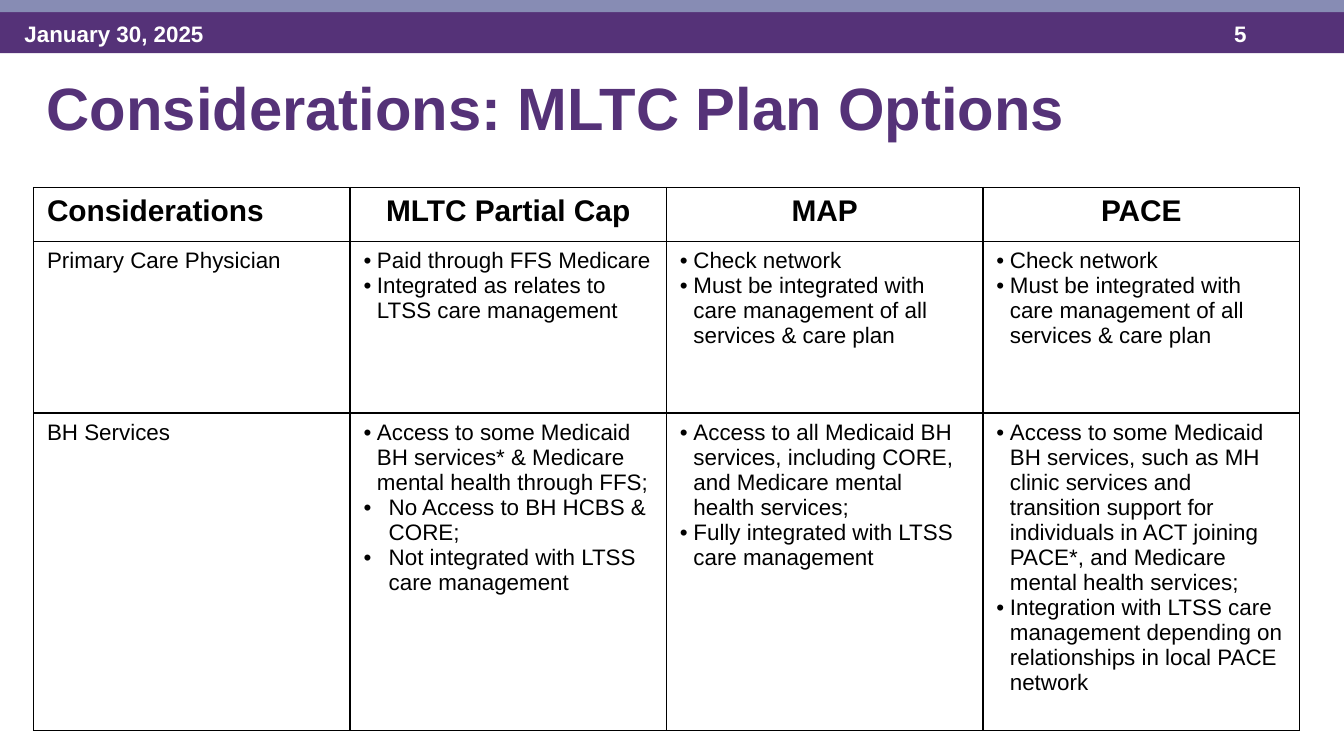
from lxml import etree
from pptx import Presentation
from pptx.dml.color import RGBColor
from pptx.enum.shapes import MSO_SHAPE
from pptx.enum.text import MSO_ANCHOR, PP_ALIGN
from pptx.oxml.ns import qn
from pptx.util import Pt

RECTANGLE = MSO_SHAPE.RECTANGLE
TOP = MSO_ANCHOR.TOP
LEFT, CENTER = PP_ALIGN.LEFT, PP_ALIGN.CENTER
COLORS = {"purple": "553278", "lavender": "878CB4", "white": "FFFFFF", "black": "000000"}


def write_text(frame, text, size=12, color="black", bold=False, align=LEFT, indents=()):
    frame.word_wrap = True
    for index, line in enumerate(text.split("\n")):
        paragraph = frame.paragraphs[0] if index == 0 else frame.add_paragraph()
        paragraph.alignment = align
        if indents:
            indent = Pt(indents[index])
            properties = paragraph._p.get_or_add_pPr()
            properties.set("marL", str(indent))
            properties.set("indent", str(-indent))
            etree.SubElement(properties, qn("a:buFont")).set("typeface", "Arial")
            etree.SubElement(properties, qn("a:buChar")).set("char", "•")
        run = paragraph.add_run()
        run.text = line
        run.font.name = "Arial"
        run.font.size = Pt(size)
        run.font.bold = bold
        run.font.color.rgb = RGBColor.from_string(COLORS[color])


def add_borders(cell):
    properties = cell._tc.get_or_add_tcPr()
    for position, side in enumerate(("lnL", "lnR", "lnT", "lnB")):
        line = etree.Element(qn(f"a:{side}"), w=str(Pt(1)))
        fill = etree.SubElement(line, qn("a:solidFill"))
        etree.SubElement(fill, qn("a:srgbClr")).set("val", COLORS["black"])
        properties.insert(position, line)


presentation = Presentation()
presentation.slide_width = Pt(720)
presentation.slide_height = Pt(405)
slide = presentation.slides.add_slide(presentation.slide_layouts[6])

for top, height, color in ((5, 23.5, "purple"), (0, 6.5, "lavender")):
    band = slide.shapes.add_shape(RECTANGLE, 0, Pt(top), Pt(720), Pt(height))
    band.shadow.inherit = False
    band.fill.solid()
    band.fill.fore_color.rgb = RGBColor.from_string(COLORS[color])
    band.line.fill.background()

labels = [
    ("5", (654, 7.2, 54, 21.6), 12, "white"),
    ("January 30, 2025", (6, 7.2, 168, 21.6), 12, "white"),
    ("Considerations: MLTC Plan Options", (18, 34.5, 660, 60), 32, "purple"),
]
for text, box, size, color in labels:
    label = slide.shapes.add_textbox(*map(Pt, box))
    label.text_frame.vertical_anchor = TOP
    write_text(label.text_frame, text, size=size, color=color, bold=True)

NARROW, WIDE = 7.2, 13.5
network_points = "Check network\nMust be integrated with care management of all services & care plan"
rows = [
    ["Considerations", "MLTC Partial Cap", "MAP", "PACE"],
    [
        "Primary Care Physician",
        "Paid through FFS Medicare\nIntegrated as relates to LTSS care management",
        network_points,
        network_points,
    ],
    [
        "BH Services",
        "Access to some Medicaid BH services* & Medicare mental health through FFS;\n"
        "No Access to BH HCBS & CORE;\n"
        "Not integrated with LTSS care management",
        "Access to all Medicaid BH services, including CORE, and Medicare mental health services;\n"
        "Fully integrated with LTSS care management",
        "Access to some Medicaid BH services, such as MH clinic services and transition support "
        "for individuals in ACT joining PACE*, and Medicare mental health services;\n"
        "Integration with LTSS care management depending on relationships in local PACE network",
    ],
]
row_heights = [28.8, 92, 170]
column_width = 169.55

table = slide.shapes.add_table(
    3, 4, Pt(18), Pt(100.5), Pt(4 * column_width), Pt(sum(row_heights))
).table
table.horz_banding = False
for column in table.columns:
    column.width = Pt(column_width)

for row_index, texts in enumerate(rows):
    table.rows[row_index].height = Pt(row_heights[row_index])
    header = row_index == 0
    for column_index, text in enumerate(texts):
        cell = table.cell(row_index, column_index)
        cell.fill.solid()
        cell.fill.fore_color.rgb = RGBColor.from_string(COLORS["white"])
        add_borders(cell)
        bulleted = not header and column_index > 0
        write_text(
            cell.text_frame,
            text,
            size=16 if header else 12,
            bold=header,
            align=CENTER if header and column_index > 0 else LEFT,
            indents=(NARROW, WIDE if row_index == 2 and column_index == 1 else NARROW, WIDE) if bulleted else (),
        )

presentation.save("out.pptx")
